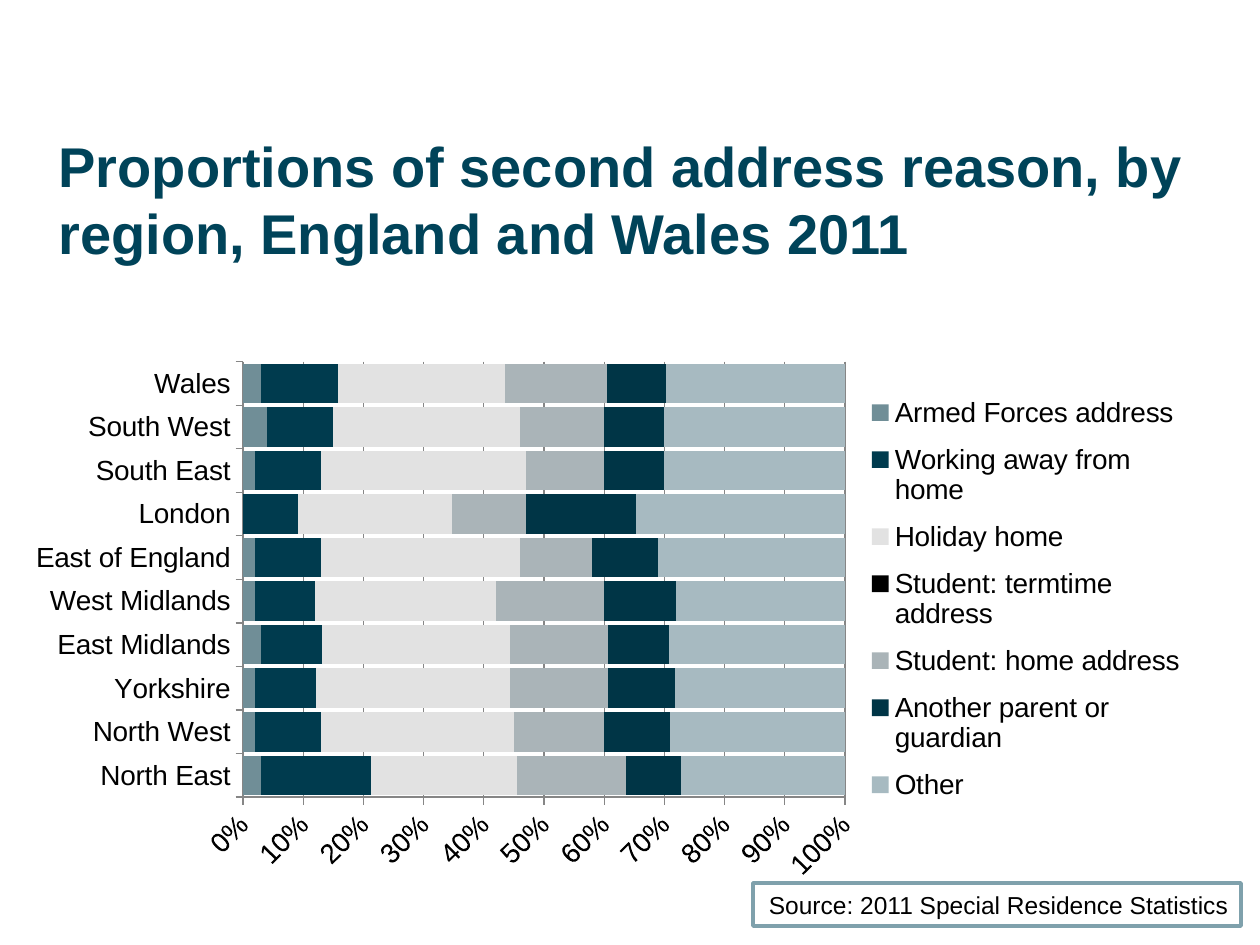
import pptx
import pptx.util
import pptx.dml.color
import pptx.chart.data
import pptx.enum.chart
import pptx.enum.text
import pptx.enum.shapes
import pptx.oxml
import pptx.oxml.ns

PX = 914400 / 126
FONT = "Arial"
REGIONS = [
    "North East", "North West", "Yorkshire", "East Midlands", "West Midlands",
    "East of England", "London", "South East", "South West", "Wales",
]
REASONS = [
    ("Armed Forces address", "708E97", [3, 2, 2, 3, 2, 2, 0, 2, 4, 3]),
    ("Working away from home", "003B4E", [18, 11, 10, 10, 10, 11, 9, 11, 11, 13]),
    ("Holiday home", "E2E2E2", [24, 32, 32, 31, 30, 33, 25, 34, 31, 28]),
    ("Student: termtime address", "000000", [0] * 10),
    ("Student: home address", "AAB4B8", [18, 15, 16, 16, 18, 12, 12, 13, 14, 17]),
    ("Another parent or guardian", "003546", [9, 11, 11, 10, 12, 11, 18, 10, 10, 10]),
    ("Other", "A7BAC1", [27, 29, 28, 29, 28, 31, 34, 30, 30, 30]),
]


def px(length):
    return pptx.util.Emu(round(length * PX))


def color(hex_string):
    return pptx.dml.color.RGBColor.from_string(hex_string)


def set_font(font, size, hex_string, bold=False):
    font.name = FONT
    font.size = pptx.util.Pt(size)
    font.bold = bold
    font.color.rgb = color(hex_string)


def place_title(page, box):
    title = page.shapes.title
    title.left, title.top, title.width, title.height = map(px, box)
    frame = title.text_frame
    frame.text = "Proportions of second address reason, by region, England and Wales 2011"
    frame.word_wrap = True
    frame.auto_size = pptx.enum.text.MSO_AUTO_SIZE.NONE
    frame.vertical_anchor = pptx.enum.text.MSO_ANCHOR.TOP
    para = frame.paragraphs[0]
    para.alignment = pptx.enum.text.PP_ALIGN.LEFT
    set_font(para.runs[0].font, 32, "004359", True)


def manual_layout(chart_box, box, target=""):
    left, top, width, height = chart_box
    x, y = box[0] / width, box[1] / height
    w, h = box[2] / width, box[3] / height
    return pptx.oxml.parse_xml(
        f'<c:layout {pptx.oxml.ns.nsdecls("c")}><c:manualLayout>{target}'
        '<c:xMode val="edge"/><c:yMode val="edge"/>'
        f'<c:x val="{x:.4f}"/><c:y val="{y:.4f}"/><c:w val="{w:.4f}"/><c:h val="{h:.4f}"/>'
        '</c:manualLayout></c:layout>')


def set_layout(parent, index, layout):
    for old_layout in parent.findall(pptx.oxml.ns.qn("c:layout")):
        parent.remove(old_layout)
    parent.insert(index, layout)


def format_axis(axis):
    axis.major_tick_mark = pptx.enum.chart.XL_TICK_MARK.OUTSIDE
    axis.minor_tick_mark = pptx.enum.chart.XL_TICK_MARK.NONE
    axis.format.line.color.rgb = color("868686")
    axis.format.line.width = pptx.util.Pt(0.75)
    set_font(axis.tick_labels.font, 16, "000000")


def place_chart(page, box):
    data = pptx.chart.data.CategoryChartData()
    data.categories = REGIONS
    for name, fill, values in REASONS:
        data.add_series(name, values)
    kind = pptx.enum.chart.XL_CHART_TYPE.BAR_STACKED_100
    chart = page.shapes.add_chart(kind, *map(px, box), data).chart
    set_font(chart.font, 10, "000000")
    chart.has_title = False
    plot = chart.plots[0]
    plot.gap_width = 10
    plot.overlap = 100
    plot.vary_by_categories = False
    for series, (name, fill, values) in zip(plot.series, REASONS):
        series.format.fill.solid()
        series.format.fill.fore_color.rgb = color(fill)
    target = '<c:layoutTarget val="inner"/>'
    set_layout(plot._element.getparent(), 0,
               manual_layout(box, (218, 28, 602, 440), target))

    format_axis(chart.category_axis)
    value_axis = chart.value_axis
    format_axis(value_axis)
    value_axis.minimum_scale = 0
    value_axis.maximum_scale = 1
    value_axis.major_unit = 0.1
    value_axis.has_major_gridlines = True
    value_axis.major_gridlines.format.line.color.rgb = color("868686")
    value_axis.major_gridlines.format.line.width = pptx.util.Pt(0.75)
    value_axis.tick_labels.number_format = "0%"
    value_axis.tick_labels.number_format_is_linked = False
    text_body = value_axis._element.find(pptx.oxml.ns.qn("c:txPr"))
    text_body.find(pptx.oxml.ns.qn("a:bodyPr")).set("rot", "-2700000")

    chart.has_legend = True
    chart.legend.position = pptx.enum.chart.XL_LEGEND_POSITION.RIGHT
    chart.legend.include_in_layout = False
    set_font(chart.legend.font, 16, "000000")
    set_layout(chart.legend._element, 1, manual_layout(box, (842, 47, 318, 441)))


def place_source(page, box):
    kind = pptx.enum.shapes.MSO_SHAPE.RECTANGLE
    shape = page.shapes.add_shape(kind, *map(px, box))
    shape.shadow.inherit = False
    shape.fill.solid()
    shape.fill.fore_color.rgb = color("FFFFFF")
    shape.line.color.rgb = color("7FA1AC")
    shape.line.width = pptx.util.Pt(2)
    frame = shape.text_frame
    frame.text = "Source: 2011 Special Residence Statistics"
    frame.word_wrap = False
    frame.auto_size = pptx.enum.text.MSO_AUTO_SIZE.SHAPE_TO_FIT_TEXT
    para = frame.paragraphs[0]
    para.alignment = pptx.enum.text.PP_ALIGN.RIGHT
    set_font(para.runs[0].font, 14, "000000")


def main():
    deck = pptx.Presentation()
    deck.slide_width, deck.slide_height = px(1260), px(945)
    page = deck.slides.add_slide(deck.slide_layouts[5])
    place_title(page, (46, 125, 1169, 179))
    place_chart(page, (25, 334, 1171, 546))
    place_source(page, (753, 883, 488, 43))
    deck.save("out.pptx")


if __name__ == "__main__":
    main()
